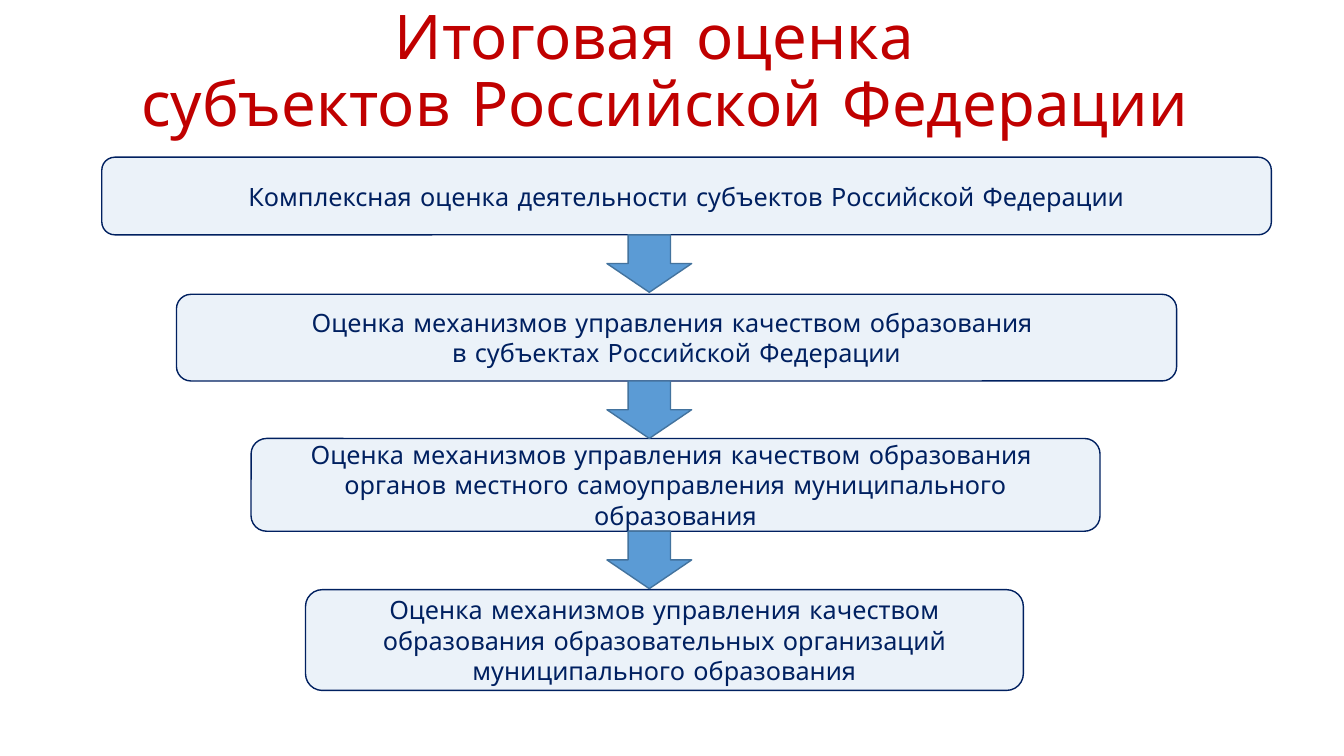
from lxml.etree import SubElement
from pptx import Presentation
from pptx.dml.color import RGBColor
from pptx.enum.shapes import MSO_SHAPE as Shape
from pptx.enum.text import MSO_ANCHOR as Anchor, PP_ALIGN as Align
from pptx.oxml.ns import qn
from pptx.util import Inches, Pt

NAVY, BLUE, ARROW_EDGE, RED = "002060", "5B9BD5", "43739E", "C00000"
TITLE = "Итоговая оценка \vсубъектов Российской Федерации"
LEVELS = [
    ((1.01, 1.56, 11.6, 0.77),
     ["Комплексная оценка деятельности субъектов Российской Федерации"]),
    ((1.75, 2.92, 9.92, 0.86),
     ["Оценка механизмов управления качеством образования ",
      "в субъектах Российской Федерации"]),
    ((2.49, 4.35, 8.42, 0.92),
     ["Оценка механизмов управления качеством образования ",
      "органов местного самоуправления муниципального образования"]),
    ((3.03, 5.85, 7.12, 1),
     ["Оценка механизмов управления качеством образования "
      "образовательных организаций муниципального образования"]),
]


def color(value):
    """Turn a hex string into a colour."""
    return RGBColor.from_string(value)


def write(frame, lines, size=18, fill=NAVY, spacing=None):
    """Write centred paragraphs into a text frame."""
    frame.word_wrap = True
    frame.vertical_anchor = Anchor.MIDDLE
    frame.text = "\n".join(lines)
    for paragraph in frame.paragraphs:
        paragraph.alignment = Align.CENTER
        if spacing:
            paragraph.line_spacing = spacing
        for run in paragraph.runs:
            run.font.name = "Comic Neue"
            run.font.size = Pt(size)
            run.font.color.rgb = color(fill)


def add_block(slide, preset, box, edge, opacity=100):
    """Add a blue preset shape with a thin outline."""
    block = slide.shapes.add_shape(preset, *map(Inches, box))
    block.shadow.inherit = False
    block.fill.solid()
    block.fill.fore_color.rgb = color(BLUE)
    if opacity < 100:
        tint = block.fill._xPr.find(f"{qn('a:solidFill')}/{qn('a:srgbClr')}")
        SubElement(tint, qn("a:alpha"), val=str(opacity * 1000))
    block.line.color.rgb = color(edge)
    block.line.width = Pt(1)
    return block


def add_heading(slide, box):
    """Place the slide title."""
    heading = slide.shapes.title
    heading.left, heading.top, heading.width, heading.height = map(Inches, box)
    write(heading.text_frame, [TITLE], size=44, fill=RED, spacing=0.9)


def add_level(slide, box, lines):
    """Place one assessment level."""
    level = add_block(slide, Shape.ROUNDED_RECTANGLE, box, NAVY, opacity=12)
    write(level.text_frame, lines)


def add_step(slide, box):
    """Place the arrow that leads down from the level in the box."""
    _, top, _, height = box
    add_block(slide, Shape.DOWN_ARROW, (6.02, top + height, 0.84, 0.57), ARROW_EDGE)


def main():
    """Build the slide."""
    deck = Presentation()
    deck.slide_width, deck.slide_height = Inches(13.33), Inches(7.5)
    slide = deck.slides.add_slide(deck.slide_layouts[5])
    add_heading(slide, (0, 0, 13.19, 1.45))
    for box, lines in LEVELS:
        add_level(slide, box, lines)
    for box, _ in LEVELS[:-1]:
        add_step(slide, box)
    deck.save("out.pptx")


if __name__ == "__main__":
    main()
